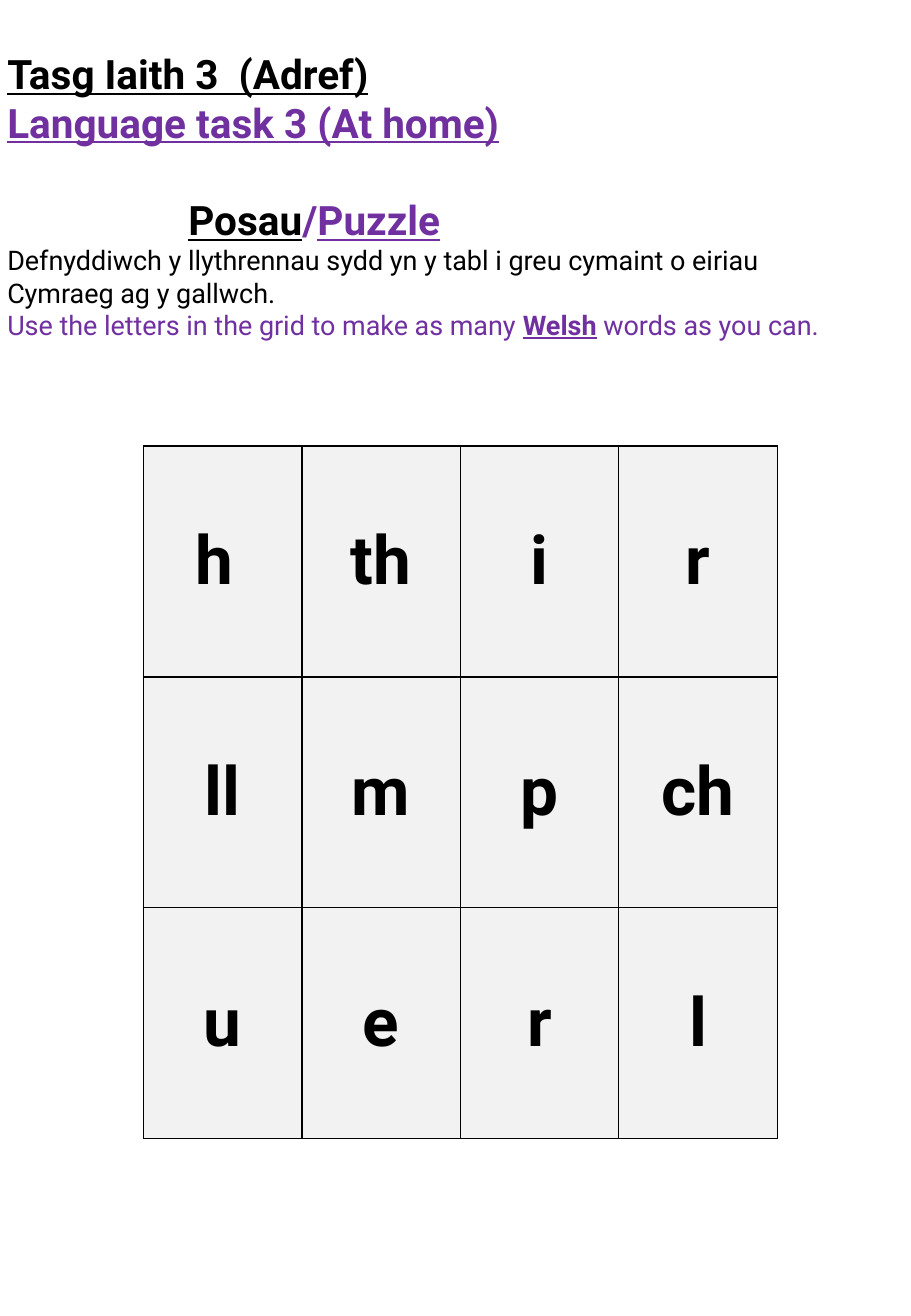
import pptx
import pptx.dml.color
import pptx.enum.text
import pptx.oxml
import pptx.oxml.ns
import pptx.util
from pptx.util import Inches

COLORS = {"black": "000000", "purple": "7030A0", "cell": "F2F2F2"}
HEADING = {"size": pptx.util.Pt(24), "bold": True, "underline": True}
SLASH = {**HEADING, "underline": False}
BODY = {"size": pptx.util.Pt(16), "bold": False, "underline": False}
STRESS = {**BODY, "bold": True, "underline": True}
LETTER = {"size": pptx.util.Pt(40), "bold": True}


def add_span(para, words, color, formats):
    span = para.add_run()
    span.text = words
    span.font.name = "Roboto"
    span.font.color.rgb = pptx.dml.color.RGBColor.from_string(COLORS[color])
    for name, value in formats.items():
        setattr(span.font, name, value)


def add_border(cell, side):
    border = pptx.oxml.parse_xml(
        f'<a:{side} {pptx.oxml.ns.nsdecls("a")} w="12700"><a:solidFill>'
        f'<a:srgbClr val="{COLORS["black"]}"/></a:solidFill></a:{side}>'
    )
    cell._tc.get_or_add_tcPr().append(border)


deck = pptx.Presentation()
deck.slide_width = Inches(7.5)
deck.slide_height = Inches(10.83)
page = deck.slides.add_slide(deck.slide_layouts[6])

letters = [
    ["h ", "th", "i", "r"],
    ["ll", "m", "p", "ch"],
    ["u", "e", "r", "l"],
]
grid = page.shapes.add_table(
    3, 4, Inches(1.18), Inches(3.67), Inches(5.22), Inches(5.7)
).table
grid.first_row = False
grid.horz_banding = False
for row, row_letters in zip(grid.rows, letters):
    row.height = Inches(1.9)
    for cell, letter in zip(row.cells, row_letters):
        for side in ("lnL", "lnR", "lnT", "lnB"):
            add_border(cell, side)
        cell.fill.solid()
        cell.fill.fore_color.rgb = pptx.dml.color.RGBColor.from_string(COLORS["cell"])
        cell.vertical_anchor = pptx.enum.text.MSO_ANCHOR.MIDDLE
        para = cell.text_frame.paragraphs[0]
        para.alignment = pptx.enum.text.PP_ALIGN.CENTER
        add_span(para, letter, "black", LETTER)

instructions = [
    [("Tasg Iaith 3  (Adref)", "black", HEADING)],
    [("Language task 3 (At home)", "purple", HEADING)],
    [
        ("Posau", "black", HEADING),
        ("/", "purple", SLASH),
        ("Puzzle", "purple", HEADING),
    ],
    [
        (
            "Defnyddiwch y llythrennau sydd yn y tabl i greu cymaint o "
            "eiriau Cymraeg ag y gallwch.",
            "black",
            BODY,
        )
    ],
    [
        ("Use the letters in the grid to make as many ", "purple", BODY),
        ("Welsh", "purple", STRESS),
        (" words as you can.", "purple", BODY),
    ],
]
box = page.shapes.add_textbox(Inches(0), Inches(0.23), Inches(7.11), Inches(2.75))
frame = box.text_frame
frame_formats = {
    "word_wrap": True,
    "auto_size": pptx.enum.text.MSO_AUTO_SIZE.SHAPE_TO_FIT_TEXT,
    "vertical_anchor": pptx.enum.text.MSO_ANCHOR.MIDDLE,
    "margin_left": Inches(0.06),
    "margin_right": Inches(0.06),
    "margin_top": Inches(0.03),
    "margin_bottom": Inches(0.03),
}
for name, value in frame_formats.items():
    setattr(frame, name, value)
for index, spans in enumerate(instructions):
    para = frame.paragraphs[0] if index == 0 else frame.add_paragraph()
    for words, color, formats in spans:
        add_span(para, words, color, formats)

game_title = frame.paragraphs[2]
game_title.space_before = pptx.util.Pt(28.8)
game_title._p.get_or_add_pPr().set("marL", str(Inches(1.49)))

deck.save("out.pptx")
